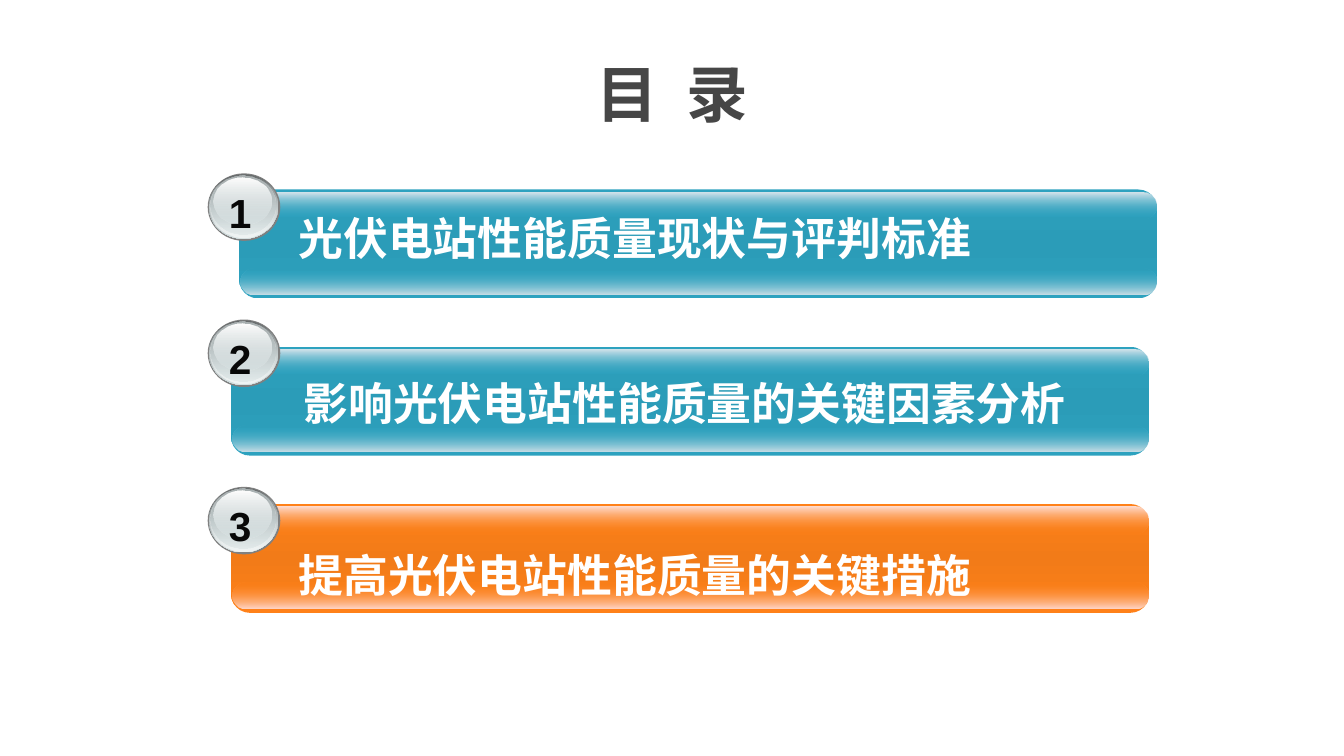
"""Builds a contents slide with three glossy numbered bars."""
from lxml import etree
from pptx import Presentation
from pptx import util as u
from pptx.dml.color import RGBColor
from pptx.enum import shapes, text
from pptx.oxml import ns

WHITE = RGBColor(0xFF, 0xFF, 0xFF)
INK = RGBColor(0x08, 0x08, 0x08)
HEADING = RGBColor(0x46, 0x46, 0x46)
RIM = RGBColor(0x80, 0x80, 0x80)
RIM_DARK = RGBColor(0x63, 0x68, 0x69)
SILVER = RGBColor(0xD6, 0xE1, 0xE2)
SILVER_PALE = RGBColor(0xF1, 0xF5, 0xF5)
SILVER_DARK = RGBColor(0xAA, 0xB2, 0xB3)
TEAL = RGBColor(0x2D, 0xA2, 0xBF)
TEAL_DEEP = RGBColor(0x2B, 0x9C, 0xB8)
TEAL_TOP = RGBColor(0xD7, 0xE5, 0xEC)
TEAL_BOTTOM = RGBColor(0xCC, 0xDF, 0xE7)
ORANGE = RGBColor(0xFF, 0x81, 0x19)
ORANGE_DEEP = RGBColor(0xF2, 0x7B, 0x18)
ORANGE_TOP = RGBColor(0xFF, 0xDF, 0xD6)
ORANGE_BOTTOM = RGBColor(0xFF, 0xD7, 0xCB)

TEAL_SET = (TEAL, TEAL_DEEP, TEAL_TOP, TEAL_BOTTOM)
ORANGE_SET = (ORANGE, ORANGE_DEEP, ORANGE_TOP, ORANGE_BOTTOM)
ROUND = shapes.MSO_SHAPE.ROUNDED_RECTANGLE
OVAL = shapes.MSO_SHAPE.OVAL

BADGE_LAYERS = [
    (0, 0, 0.72, 0.67, [(RIM, 100)]),
    (0.01, 0.01, 0.69, 0.64, [(RIM_DARK, 100), (SILVER, 100)]),
    (0.02, 0.01, 0.67, 0.63, [(SILVER, 0), (SILVER_PALE, 100)]),
    (0.03, 0.02, 0.64, 0.59, [(SILVER_DARK, 100), (SILVER, 48)]),
    (0.06, 0.04, 0.57, 0.47, [(WHITE, 100), (SILVER, 38)]),
]

ENTRIES = [
    (2.37, TEAL_SET, 1.72, (2.84, 2.03, 8.22, 0.66), 1, "光伏电站性能质量现状与评判标准"),
    (2.29, TEAL_SET, 3.17, (2.89, 3.67, 8.22, 0.66), 1, "影响光伏电站性能质量的关键因素分析"),
    (2.29, ORANGE_SET, 4.83, (2.84, 4.84, 8.22, 1.03), 2, "提高光伏电站性能质量的关键措施"),
]
FIRST_BAR_TOP, BAR_PITCH = 1.88, 1.56


class ContentsSlide:
    """Holds the fonts and the current slide, and draws its elements."""

    heading_font = "Noto Sans CJK SC"
    number_font = "Arial"

    def __init__(self, deck):
        self.slide = deck.slides.add_slide(deck.slide_layouts[6])

    def surface(self, preset, box, stops, corner=None):
        """Draw a borderless shape whose stops run evenly from top to bottom."""
        surface = self.slide.shapes.add_shape(preset, *map(u.Inches, box))
        surface.shadow.inherit = False
        surface.line.fill.background()
        if corner is not None:
            surface.adjustments[0] = corner
        if len(stops) == 1:
            surface.fill.solid()
            surface.fill.fore_color.rgb = stops[0][0]
            return
        surface.fill.gradient()
        surface.fill.gradient_angle = 270
        stop_list = surface.element.spPr.find(".//" + ns.qn("a:gsLst"))
        for default_stop in list(stop_list):
            stop_list.remove(default_stop)
        for index, (color, opacity) in enumerate(stops):
            position = 100000 * index // (len(stops) - 1)
            stop = etree.SubElement(stop_list, ns.qn("a:gs"), pos=str(position))
            shade = etree.SubElement(stop, ns.qn("a:srgbClr"), val=str(color))
            if opacity < 100:
                etree.SubElement(shade, ns.qn("a:alpha"), val=str(opacity * 1000))

    def bar(self, left, top, palette):
        """Draw a bar with a light band along its bottom and top edges."""
        base, deep, top_light, bottom_light = palette
        self.surface(ROUND, (left, top, 9.11, 1.08),
                     [(base, 100), (deep, 100), (base, 100)], 0.175)
        self.surface(ROUND, (left + 0.02, top + 0.78, 9.08, 0.26),
                     [(base, 0), (bottom_light, 100)], 0.5)
        self.surface(ROUND, (left + 0.02, top + 0.03, 9.08, 0.26),
                     [(top_light, 100), (base, 0)], 0.5)

    def badge(self, left, top, number):
        """Draw a silver button with its number."""
        for dx, dy, width, height, stops in BADGE_LAYERS:
            self.surface(OVAL, (left + dx, top + dy, width, height), stops)
        self.label((left + 0.09, top + 0.08, 0.45, 0.61), str(number), 29, INK,
                   self.number_font, align=text.PP_ALIGN.CENTER)

    def label(self, box, words, size, color, font, align=text.PP_ALIGN.LEFT,
              anchor=text.MSO_ANCHOR.TOP, spacing=1):
        """Write one bold line of text."""
        frame = self.slide.shapes.add_textbox(*map(u.Inches, box)).text_frame
        frame.word_wrap = True
        frame.vertical_anchor = anchor
        frame.margin_left = frame.margin_right = u.Inches(0.12)
        frame.margin_top = frame.margin_bottom = u.Inches(0.06)
        line = frame.paragraphs[0]
        line.alignment = align
        line.line_spacing = float(spacing)
        run = line.add_run()
        run.text = words
        run.font.size = u.Pt(size)
        run.font.bold = True
        run.font.color.rgb = color
        run.font.name = font
        etree.SubElement(run.font._element, ns.qn("a:ea"), typeface=font)


def main():
    """Build and save the slide."""
    deck = Presentation()
    deck.slide_width, deck.slide_height = u.Inches(13.33), u.Inches(7.5)
    contents = ContentsSlide(deck)
    contents.label((0.67, 0.3, 12, 1.25), "目  录", 44, HEADING, contents.heading_font,
                   text.PP_ALIGN.CENTER, text.MSO_ANCHOR.MIDDLE)
    for index, (left, palette, badge_top, label_box, spacing, topic) in enumerate(ENTRIES):
        contents.bar(left, FIRST_BAR_TOP + BAR_PITCH * index, palette)
        contents.badge(2.06, badge_top, index + 1)
        contents.label(label_box, topic, 32, WHITE, contents.heading_font, spacing=spacing)
    deck.save("out.pptx")


if __name__ == "__main__":
    main()
